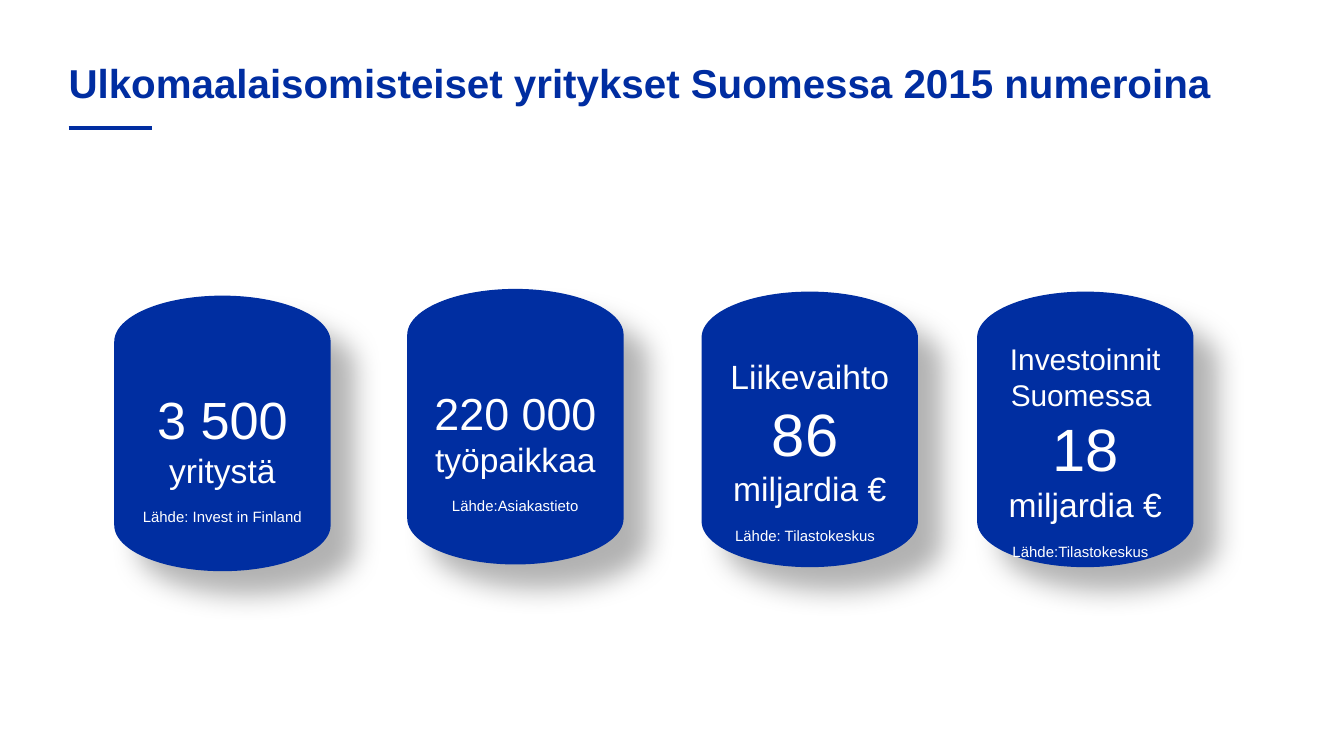
from lxml import etree
from pptx import Presentation
from pptx.dml.color import RGBColor
from pptx.enum.shapes import MSO_CONNECTOR, MSO_SHAPE
from pptx.enum.text import MSO_ANCHOR, PP_ALIGN
from pptx.oxml.ns import qn
from pptx.util import Inches, Pt

DISK = MSO_SHAPE.FLOWCHART_MAGNETIC_DISK
STRAIGHT = MSO_CONNECTOR.STRAIGHT
MIDDLE, BOTTOM = MSO_ANCHOR.MIDDLE, MSO_ANCHOR.BOTTOM
CENTER = PP_ALIGN.CENTER

COLORS = {"title": "002DA1", "disk": "002EA1", "text": "FFFFFF", "shadow": "000000"}
SLIDE_WIDTH = 10
SLIDE_HEIGHT = SLIDE_WIDTH * 9 / 16
DISK_WIDTH, DISK_HEIGHT = 1.61, 2.05

# Each disk: left, top, paragraphs; each paragraph: space before, runs of (text, size)
DISKS = [
    (0.85, 2.2, [
        (0, [("3 500", 28)]),
        (0, [("yritystä", 18)]),
        (9, [("Lähde: Invest in Finland", 8)]),
    ]),
    (3.03, 2.15, [
        (0, [("220 000 ", 24), ("työpaikkaa", 18)]),
        (9, [("Lähde:Asiakastieto", 8)]),
    ]),
    (5.22, 2.17, [
        (0, [("Liikevaihto", 18)]),
        (0, [("86", 32), (" ", 18)]),
        (0, [("miljardia €", 18)]),
        (0, [("Lähde: Tilastokeskus", 8), (" ", 18)]),
    ]),
    (7.27, 2.17, [
        (0, [("Investoinnit Suomessa ", 16)]),
        (0, [("18", 32)]),
        (0, [("miljardia €", 18)]),
        (0, [("Lähde:Tilastokeskus", 8), (" ", 18)]),
    ]),
]


class SlideBuilder:
    def __init__(self, slide, font_name="Arial"):
        self.slide = slide
        self.font_name = font_name

    def color(self, name):
        return RGBColor.from_string(COLORS[name])

    def style(self, font, color, bold=False):
        font.name = self.font_name
        font.bold = bold
        font.color.rgb = self.color(color)

    def title(self, text, left, top, width, height):
        box = self.slide.shapes.add_textbox(
            Inches(left), Inches(top), Inches(width), Inches(height))
        frame = box.text_frame
        frame.word_wrap = True
        frame.vertical_anchor = BOTTOM
        frame.margin_left = frame.margin_right = 0
        frame.margin_top = frame.margin_bottom = 0
        paragraph = frame.paragraphs[0]
        paragraph.text = text
        paragraph.line_spacing = 0.9
        paragraph.font.size = Pt(21.6)
        self.style(paragraph.font, "title", bold=True)

    def rule(self, left, right, y):
        line = self.slide.shapes.add_connector(
            STRAIGHT, Inches(left), Inches(y), Inches(right), Inches(y))
        line.line.color.rgb = self.color("title")
        line.line.width = Pt(2.25)
        etree.SubElement(line._element.spPr, qn("a:effectLst"))

    def shadow(self, shape):
        """Cast a soft shadow down to the right."""
        shape.shadow.inherit = False
        effects = shape._element.spPr.find(qn("a:effectLst"))
        outer = etree.SubElement(
            effects, qn("a:outerShdw"), blurRad=str(Pt(15)), dist=str(Pt(18)),
            dir=str(45 * 60000), algn="ctr", rotWithShape="0")
        color = etree.SubElement(outer, qn("a:srgbClr"), val=COLORS["shadow"])
        etree.SubElement(color, qn("a:alpha"), val="30000")

    def disk(self, left, top, paragraphs):
        shape = self.slide.shapes.add_shape(
            DISK, Inches(left), Inches(top), Inches(DISK_WIDTH), Inches(DISK_HEIGHT))
        shape.fill.solid()
        shape.fill.fore_color.rgb = self.color("disk")
        shape.line.fill.background()
        self.shadow(shape)
        frame = shape.text_frame
        frame.word_wrap = True
        frame.vertical_anchor = MIDDLE
        for index, (before, runs) in enumerate(paragraphs):
            paragraph = frame.add_paragraph() if index else frame.paragraphs[0]
            paragraph.alignment = CENTER
            paragraph.space_before = Pt(before)
            self.style(paragraph.font, "text")
            for text, size in runs:
                run = paragraph.add_run()
                run.text = text
                run.font.size = Pt(size)


def main():
    presentation = Presentation()
    presentation.slide_width = Inches(SLIDE_WIDTH)
    presentation.slide_height = Inches(SLIDE_HEIGHT)
    builder = SlideBuilder(presentation.slides.add_slide(presentation.slide_layouts[6]))
    builder.title("Ulkomaalaisomisteiset yritykset Suomessa 2015 numeroina",
                  0.51, 0.21, 8.99, 0.59)
    builder.rule(0.51, 1.13, 0.95)
    for left, top, paragraphs in DISKS:
        builder.disk(left, top, paragraphs)
    presentation.save("out.pptx")


if __name__ == "__main__":
    main()
